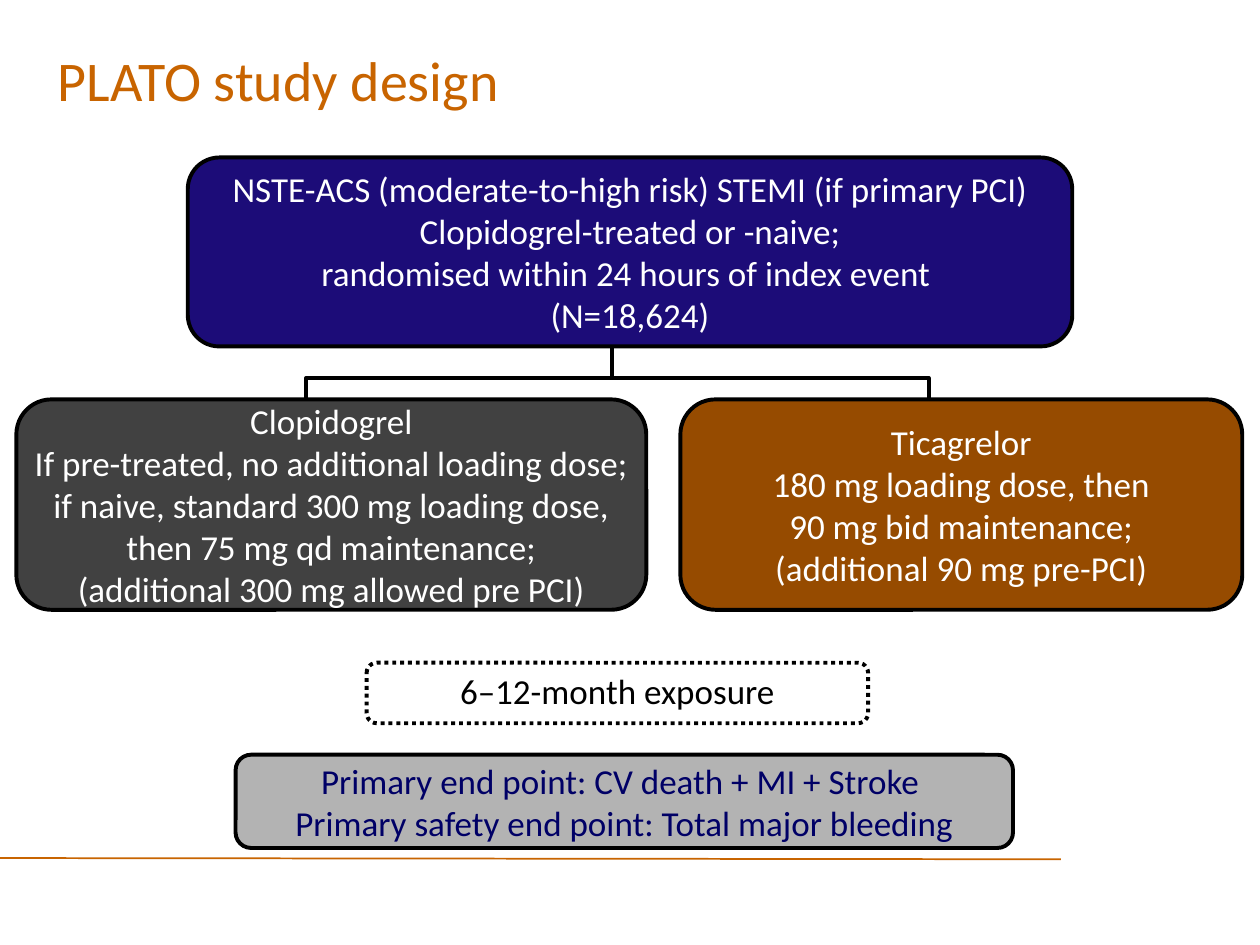
from pptx import Presentation
from pptx.dml.color import RGBColor
from pptx.enum.dml import MSO_LINE
from pptx.enum.shapes import MSO_CONNECTOR, MSO_SHAPE
from pptx.enum.text import MSO_ANCHOR, PP_ALIGN
from pptx.oxml.ns import qn
from pptx.util import Inches, Pt
from lxml import etree

FONT = "Calibri"
ORANGE, BLACK, WHITE = "C86400", "000000", "FFFFFF"

TITLE = "PLATO study design"

# Boxes: (left, top, width, height), fill, text colour, lines of text
ENDPOINTS = ((1.87, 5.99, 6.17, 0.74), "B3B3B3", "000066", [
    "Primary end point: CV death + MI + Stroke ",
    "Primary safety end point: Total major bleeding"])
EXPOSURE = ((2.91, 5.26, 3.98, 0.48), None, BLACK, ["6–12-month exposure"])
CLOPIDOGREL = ((0.13, 3.17, 5, 1.67), "414141", WHITE, [
    "Clopidogrel",
    "If pre-treated, no additional loading dose;",
    "if naive, standard 300 mg loading dose,",
    "then 75 mg qd maintenance;",
    "(additional 300 mg allowed pre PCI)"])
TICAGRELOR = ((5.4, 3.17, 4.46, 1.67), "964B00", WHITE, [
    "Ticagrelor",
    "180 mg loading dose, then",
    "90 mg bid maintenance;",
    "(additional 90 mg pre-PCI)"])
POPULATION = ((1.49, 1.25, 7.02, 1.5), "1C0C78", WHITE, [
    "NSTE-ACS (moderate-to-high risk) STEMI (if primary PCI)",
    "Clopidogrel-treated or -naive;",
    "randomised within 24 hours of index event ",
    "(N=18,624)"])


def rgb(value):
    return RGBColor.from_string(value)


def set_font(p, size, color):
    for r in p.runs:
        r.font.name = FONT
        r.font.size = Pt(size)
        r.font.color.rgb = rgb(color)


def set_line(sp, color, width):
    sp.line.color.rgb = rgb(color)
    sp.line.width = Pt(width)


def add_outline_shape(kind, place, fill, adjustment):
    sp = s.shapes.add_shape(kind, *map(Inches, place))
    sp.shadow.inherit = False
    sp.adjustments[0] = adjustment
    if fill:
        sp.fill.solid()
        sp.fill.fore_color.rgb = rgb(fill)
    else:
        sp.fill.background()
    set_line(sp, BLACK, 2.25)
    return sp


def add_box(place, fill, color, lines):
    sp = add_outline_shape(MSO_SHAPE.ROUNDED_RECTANGLE, place, fill, 0.167)
    tf = sp.text_frame
    tf.word_wrap = False
    tf.vertical_anchor = MSO_ANCHOR.MIDDLE
    tf.text = "\n".join(lines)
    for p in tf.paragraphs:
        p.alignment = PP_ALIGN.CENTER
        set_font(p, 20, color)
    return sp


def add_rule(x1, y1, x2, y2, color, width):
    c = s.shapes.add_connector(MSO_CONNECTOR.STRAIGHT,
                               *map(Inches, (x1, y1, x2, y2)))
    set_line(c, color, width)
    etree.SubElement(c.line._get_or_add_ln().getparent(), qn("a:effectLst"))


prs = Presentation()
prs.slide_width, prs.slide_height = Inches(10), Inches(7.5)
s = prs.slides.add_slide(prs.slide_layouts[5])

# Footer rule
add_rule(8.42, 6.82, 0, 6.81, ORANGE, 1)

# Title
title = s.shapes.title
title.left, title.top, title.width, title.height = map(Inches, (0.36, 0, 9, 1.25))
tf = title.text_frame
tf.text = TITLE
tf.vertical_anchor = MSO_ANCHOR.MIDDLE
tf.paragraphs[0].alignment = PP_ALIGN.LEFT
set_font(tf.paragraphs[0], 32, ORANGE)

# Outcomes
add_box(*ENDPOINTS)
exposure = add_box(*EXPOSURE)
exposure.line.dash_style = MSO_LINE.ROUND_DOT
exposure.text_frame.paragraphs[0].line_spacing = 0.95

# Branch from the population to both arms
add_rule(4.86, 2.69, 4.86, 3.01, BLACK, 2.25)
bracket = add_outline_shape(MSO_SHAPE.LEFT_BRACKET, (4.64, 0.79, 0.52, 4.94), None, 0)
bracket.rotation = 90

# Treatment arms and population
for box in (CLOPIDOGREL, TICAGRELOR, POPULATION):
    add_box(*box)

prs.save("out.pptx")
